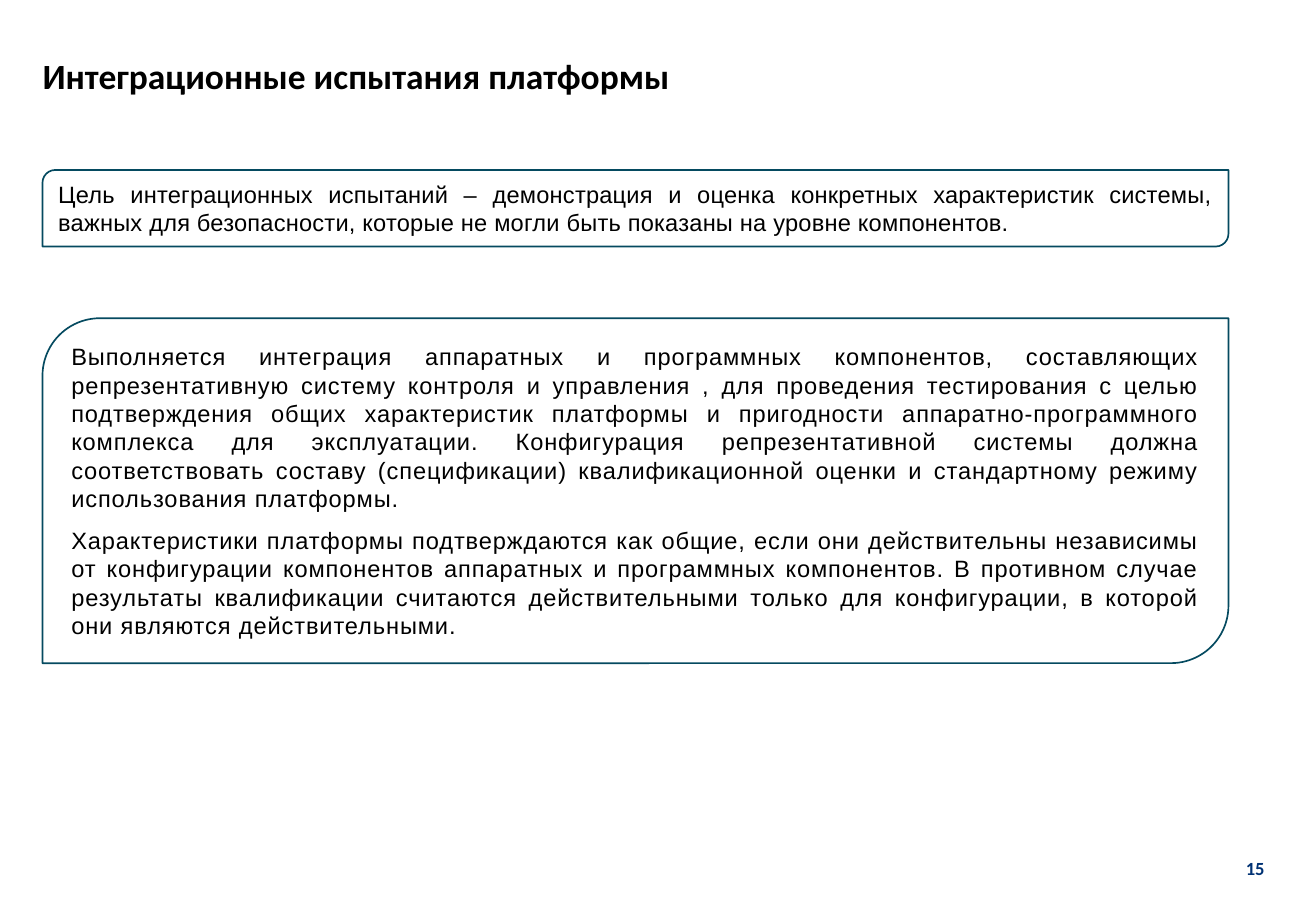
from dataclasses import dataclass

import pptx
import pptx.dml.color
import pptx.enum.shapes
import pptx.enum.text
import pptx.shapes.autoshape
import pptx.slide
import pptx.text.text
import pptx.util


@dataclass(frozen=True)
class Theme:
    heading_font: str = "Calibri"
    body_font: str = "Arial"
    ink: str = "000000"
    outline: str = "054A60"
    number: str = "003274"
    title_size: float = 21
    body_size: float = 14
    number_size: float = 11


@dataclass(frozen=True)
class Panel:
    top: float
    height: float
    tracking: int
    paragraphs: tuple[str, ...]


THEME = Theme()
LEFT = 0.35
PANEL_WIDTH = 9.76
PANELS = (
    Panel(1.4, 0.63, 10, (
        "Цель интеграционных испытаний – демонстрация и оценка конкретных "
        "характеристик системы, важных для безопасности, которые не могли быть "
        "показаны на уровне компонентов.",
    )),
    Panel(2.62, 2.84, 50, (
        "Выполняется интеграция аппаратных и программных компонентов, "
        "составляющих репрезентативную систему контроля и управления , для "
        "проведения тестирования с целью подтверждения общих характеристик "
        "платформы и пригодности аппаратно-программного комплекса для "
        "эксплуатации. Конфигурация репрезентативной системы должна "
        "соответствовать составу (спецификации) квалификационной оценки и "
        "стандартному режиму использования платформы.",
        "Характеристики платформы подтверждаются как общие, если они "
        "действительны независимы от конфигурации компонентов аппаратных и "
        "программных компонентов. В противном случае результаты квалификации "
        "считаются действительными только для конфигурации, в которой они "
        "являются действительными.",
    )),
)


def color(value: str) -> pptx.dml.color.RGBColor:
    return pptx.dml.color.RGBColor.from_string(value)


def style(para: pptx.text.text._Paragraph, font: str, size: float,
          ink: str, bold: bool = False) -> None:
    para.font.name = font
    para.font.size = pptx.util.Pt(size)
    para.font.bold = bold
    para.font.color.rgb = color(ink)


def add_title(slide: pptx.slide.Slide, text: str) -> None:
    title = slide.shapes.title
    title.left, title.top = pptx.util.Inches(LEFT), pptx.util.Inches(0.48)
    title.width, title.height = pptx.util.Inches(9.44), pptx.util.Inches(0.33)
    frame = title.text_frame
    frame.text = text
    frame.auto_size = pptx.enum.text.MSO_AUTO_SIZE.NONE
    frame.vertical_anchor = pptx.enum.text.MSO_ANCHOR.MIDDLE
    frame.margin_left = frame.margin_right = 0
    frame.margin_top = frame.margin_bottom = 0
    para = frame.paragraphs[0]
    para.alignment = pptx.enum.text.PP_ALIGN.LEFT
    para.line_spacing = 0.9
    style(para, THEME.heading_font, THEME.title_size, THEME.ink, True)


def add_panel(slide: pptx.slide.Slide, panel: Panel) -> pptx.shapes.autoshape.Shape:
    box = slide.shapes.add_shape(
        pptx.enum.shapes.MSO_SHAPE.ROUND_2_DIAG_RECTANGLE,
        pptx.util.Inches(LEFT), pptx.util.Inches(panel.top),
        pptx.util.Inches(PANEL_WIDTH), pptx.util.Inches(panel.height))
    box.shadow.inherit = False
    box.fill.background()
    box.line.color.rgb = color(THEME.outline)
    box.line.width = pptx.util.Pt(1)
    frame = box.text_frame
    frame.word_wrap = True
    frame.vertical_anchor = pptx.enum.text.MSO_ANCHOR.MIDDLE
    frame.text = "\n".join(panel.paragraphs)
    for index, para in enumerate(frame.paragraphs):
        para.alignment = pptx.enum.text.PP_ALIGN.JUSTIFY
        para.space_before = pptx.util.Pt(8 if index else 0)
        style(para, THEME.body_font, THEME.body_size, THEME.ink)
        for span in para.runs:
            span.font._element.set("spc", str(panel.tracking))
    return box


def add_page_number(slide: pptx.slide.Slide, number: int) -> None:
    box = slide.shapes.add_textbox(
        pptx.util.Inches(10.11), pptx.util.Inches(6.86),
        pptx.util.Inches(0.44), pptx.util.Inches(0.58))
    frame = box.text_frame
    frame.word_wrap = False
    frame.vertical_anchor = pptx.enum.text.MSO_ANCHOR.MIDDLE
    frame.text = str(number)
    para = frame.paragraphs[0]
    para.alignment = pptx.enum.text.PP_ALIGN.CENTER
    style(para, THEME.heading_font, THEME.number_size, THEME.number, True)


def main() -> None:
    deck = pptx.Presentation()
    deck.slide_width = pptx.util.Inches(10.83)
    deck.slide_height = pptx.util.Inches(7.5)
    slide = deck.slides.add_slide(deck.slide_layouts.get_by_name("Title Only"))
    add_title(slide, "Интеграционные испытания платформы")
    for panel in PANELS:
        add_panel(slide, panel)
    add_page_number(slide, 15)
    deck.save("out.pptx")


if __name__ == "__main__":
    main()
